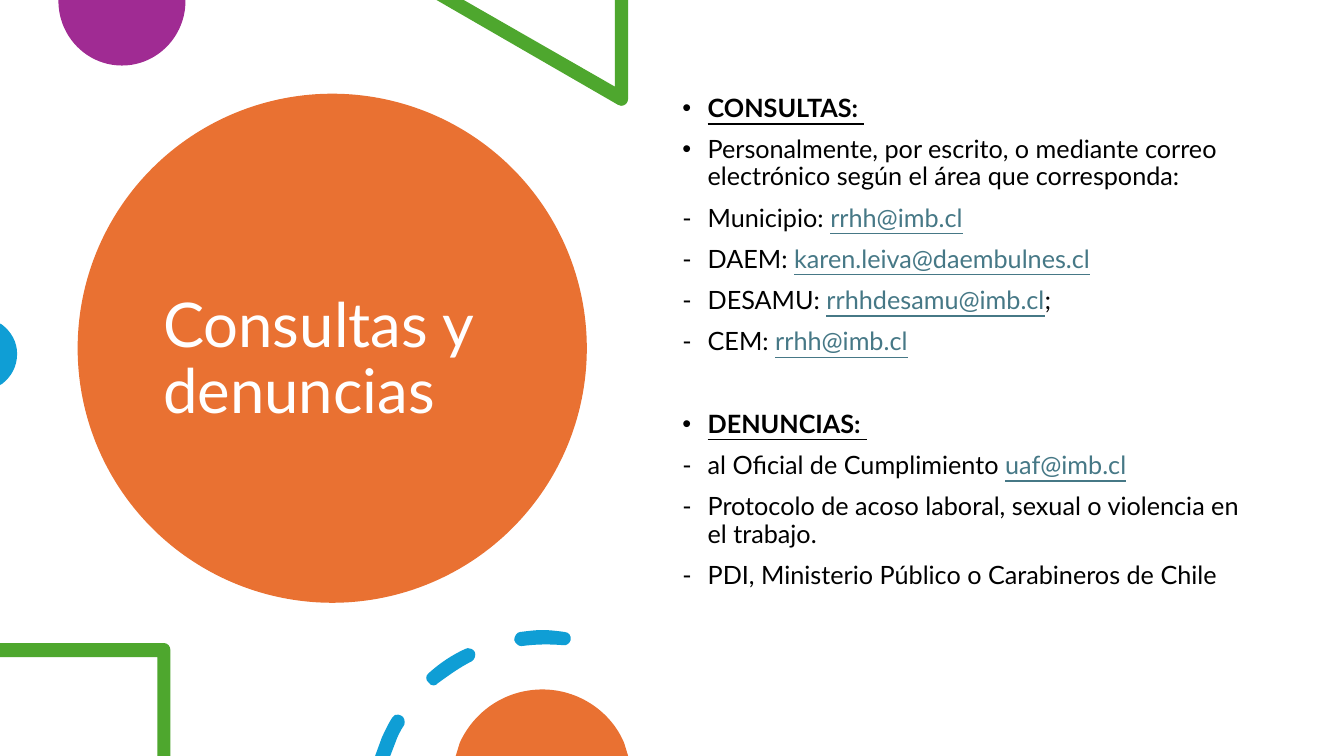
import pptx
import pptx.util
import pptx.dml.color
import pptx.enum.shapes
import pptx.enum.text
import pptx.oxml.ns
import lxml.etree

Inches = pptx.util.Inches
Pt = pptx.util.Pt
RGBColor = pptx.dml.color.RGBColor
qn = pptx.oxml.ns.qn

ORANGE = RGBColor(0xE9, 0x71, 0x32)
PURPLE = RGBColor(0xA0, 0x2B, 0x93)
GREEN = RGBColor(0x4E, 0xA7, 0x2E)
BLUE = RGBColor(0x0F, 0x9E, 0xD5)
LINK = RGBColor(0x46, 0x78, 0x86)
BLACK = RGBColor(0, 0, 0)
WHITE = RGBColor(0xFF, 0xFF, 0xFF)
FONT = "Lato"
BULLET_FONTS = {"•": "Arial", "-": FONT}

deck = pptx.Presentation()
deck.slide_width, deck.slide_height = Inches(13.33), Inches(7.5)
page = deck.slides.add_slide(deck.slide_layouts[6])


def paint(shape, color):
    shape.shadow.inherit = False
    shape.fill.solid()
    shape.fill.fore_color.rgb = color
    shape.line.fill.background()


def draw_outline(color, *contours):
    """Fill closed contours; pairs are corners, sextuples are cubic curves."""
    builder = None
    for start, *steps in contours:
        x, y = Inches(start[0]), Inches(start[1])
        if builder is None:
            builder = page.shapes.build_freeform(x, y, scale=1.0)
        else:
            builder.move_to(x, y)
        builder.add_line_segments([(Inches(step[i]), Inches(step[i + 1]))
                                   for step in steps for i in range(0, len(step), 2)])
    shape = builder.convert_to_shape()
    paint(shape, color)
    # Join the three points of each curve into one Bézier segment
    segments = iter(list(shape._element.iter(qn("a:lnTo"))))
    for start, *steps in contours:
        for step in steps:
            first = next(segments)
            if len(step) == 6:
                first.tag = qn("a:cubicBezTo")
                for following in (next(segments), next(segments)):
                    first.append(following[0])
                    following.getparent().remove(following)


# Large circle with the title
circle = page.shapes.add_shape(pptx.enum.shapes.MSO_SHAPE.OVAL,
                               Inches(0.77), Inches(0.93), Inches(5.05), Inches(5.05))
paint(circle, ORANGE)

title = page.shapes.add_textbox(Inches(1.52), Inches(1.35), Inches(3.54), Inches(4.45))
title.text_frame.word_wrap = True
title.text_frame.vertical_anchor = pptx.enum.text.MSO_ANCHOR.MIDDLE
title.text_frame.text = "Consultas y denuncias"
para = title.text_frame.paragraphs[0]
para.line_spacing = 0.9
font = para.runs[0].font
font.name, font.size, font.color.rgb = FONT, Pt(44), WHITE

# Shapes cut by the page edges: top and left
draw_outline(PURPLE, [(1.84, 0), (0.58, 0), (0.58, 0.01),
                      (0.58, 0.36, 0.86, 0.65, 1.21, 0.65),
                      (1.56, 0.65, 1.84, 0.36, 1.84, 0.01)])
draw_outline(GREEN, [(6.23, 0), (6.1, 0), (6.1, 0.86), (4.6, 0), (4.33, 0), (6.13, 1.04),
                     (6.14, 1.05, 6.15, 1.05, 6.16, 1.05),
                     (6.2, 1.05, 6.23, 1.02, 6.23, 0.98)])
draw_outline(BLUE, [(0, 3.21), (0, 3.82), (0.02, 3.81),
                    (0.11, 3.74, 0.17, 3.64, 0.17, 3.51),
                    (0.17, 3.39, 0.11, 3.29, 0.02, 3.22)])

# Contact list: bullet, then spans of (text, style)
contacts = [
    ("•", [("CONSULTAS: ", "heading")]),
    ("•", [("Personalmente, por escrito, o mediante correo electrónico "
            "según el área que corresponda:", "plain")]),
    ("-", [("Municipio: ", "plain"), ("rrhh@imb.cl", "link")]),
    ("-", [("DAEM: ", "plain"), ("karen.leiva@daembulnes.cl", "link")]),
    ("-", [("DESAMU: ", "plain"), ("rrhhdesamu@imb.cl", "link"), (";", "plain")]),
    ("-", [("CEM: ", "plain"), ("rrhh@imb.cl", "link")]),
    ("•", [("DENUNCIAS: ", "heading")]),
    ("-", [("al Oficial de Cumplimiento ", "plain"), ("uaf@imb.cl", "link")]),
    ("-", [("Protocolo de acoso laboral, sexual o violencia en el trabajo.", "plain")]),
    ("-", [("PDI, Ministerio Público o Carabineros de Chile", "plain")]),
]
body = page.shapes.add_textbox(Inches(6.67), Inches(0.9), Inches(5.75), Inches(5.35))
frame = body.text_frame
frame.word_wrap = True
for index, (bullet, spans) in enumerate(contacts):
    para = frame.paragraphs[0] if index == 0 else frame.add_paragraph()
    para.line_spacing = 0.9
    # The second heading stands one line further down
    para.space_before = Pt(39.5 if index and spans[0][1] == "heading" else 10)
    properties = para._p.get_or_add_pPr()
    properties.set("marL", str(Inches(0.25)))
    properties.set("indent", str(-Inches(0.25)))
    lxml.etree.SubElement(properties, qn("a:buFont")).set("typeface", BULLET_FONTS[bullet])
    lxml.etree.SubElement(properties, qn("a:buChar")).set("char", bullet)
    for text, style in spans:
        span = para.add_run()
        span.text = text
        font = span.font
        font.name, font.size = FONT, Pt(18)
        font.bold = style == "heading"
        font.underline = style != "plain"
        font.color.rgb = LINK if style == "link" else BLACK
    # The bullet takes its size from the paragraph's own font
    para.font.size = Pt(18)

# Shapes cut by the bottom edge
draw_outline(GREEN, [(1.63, 6.38), (0, 6.38), (0, 6.52), (1.56, 6.52), (1.56, 7.5),
                     (1.69, 7.5), (1.69, 6.45), (1.69, 6.41, 1.66, 6.38, 1.63, 6.38)])
draw_outline(
    BLUE,
    [(3.95, 7.09), (3.93, 7.08, 3.9, 7.1, 3.89, 7.12), (3.85, 7.18, 3.82, 7.25, 3.79, 7.31),
     (3.72, 7.5), (3.87, 7.5), (3.92, 7.37), (3.94, 7.31, 3.97, 7.25, 4.01, 7.19),
     (4.02, 7.16, 4.01, 7.11, 3.98, 7.1), (3.97, 7.09, 3.96, 7.09, 3.95, 7.09)],
    [(4.64, 6.43), (4.63, 6.43, 4.62, 6.43, 4.61, 6.44), (4.48, 6.5, 4.36, 6.58, 4.25, 6.68),
     (4.22, 6.7, 4.22, 6.75, 4.25, 6.77), (4.26, 6.79, 4.28, 6.8, 4.3, 6.8),
     (4.32, 6.8, 4.33, 6.79, 4.34, 6.78), (4.45, 6.7, 4.56, 6.62, 4.68, 6.56),
     (4.71, 6.54, 4.72, 6.5, 4.71, 6.47), (4.69, 6.44, 4.67, 6.43, 4.64, 6.43)],
    [(5.38, 6.25), (5.31, 6.25, 5.24, 6.26, 5.16, 6.27), (5.13, 6.27, 5.1, 6.31, 5.1, 6.35),
     (5.11, 6.38, 5.14, 6.41, 5.17, 6.41), (5.32, 6.39, 5.45, 6.39, 5.58, 6.4),
     (5.62, 6.41, 5.65, 6.38, 5.66, 6.35), (5.67, 6.31, 5.64, 6.27, 5.6, 6.27),
     (5.53, 6.26, 5.45, 6.25, 5.38, 6.25)])
draw_outline(ORANGE, [(5.38, 6.84), (5.01, 6.84, 4.7, 7.06, 4.56, 7.37), (4.52, 7.5),
                      (6.23, 7.5), (6.19, 7.37), (6.06, 7.06, 5.74, 6.84, 5.38, 6.84)])

deck.save("out.pptx")
